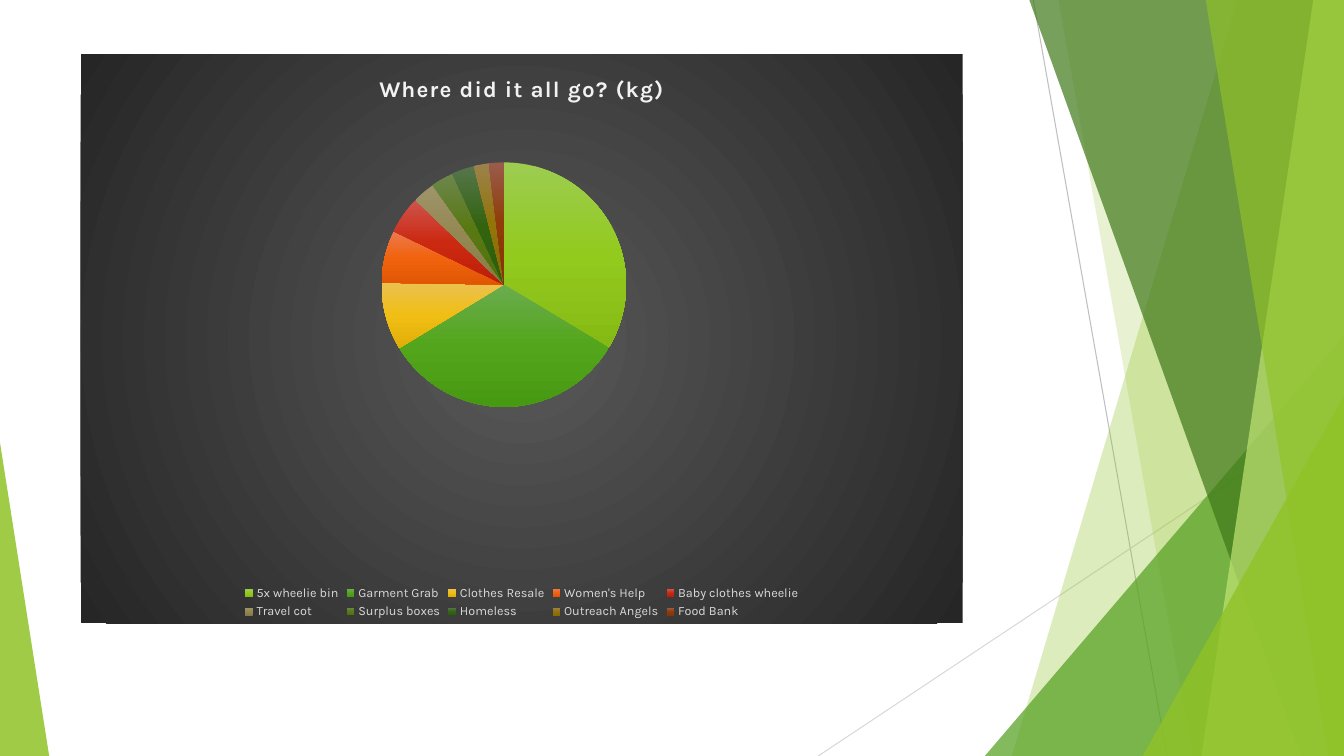
from dataclasses import dataclass

from lxml import etree
from pptx import Presentation
from pptx.chart.chart import Chart
from pptx.chart.data import CategoryChartData
from pptx.dml.color import RGBColor
from pptx.enum.chart import XL_CHART_TYPE, XL_LEGEND_POSITION
from pptx.enum.dml import MSO_THEME_COLOR
from pptx.enum.shapes import MSO_CONNECTOR, MSO_SHAPE
from pptx.oxml import parse_xml
from pptx.oxml.ns import nsdecls, qn
from pptx.shapes.autoshape import Shape
from pptx.slide import Slide
from pptx.util import Cm, Pt

PIE = XL_CHART_TYPE.PIE
LEGEND_BOTTOM = XL_LEGEND_POSITION.BOTTOM
STRAIGHT = MSO_CONNECTOR.STRAIGHT
TRIANGLE = MSO_SHAPE.ISOSCELES_TRIANGLE

FONT = "Karla"
WIDTH, HEIGHT = 33.87, 19.05
BAND_TOP = -0.03
LINEAR_DOWN = '<a:lin ang="5400000" scaled="0"/>'
FROM_CENTRE = '<a:path path="circle"><a:fillToRect l="50000" t="50000" r="50000" b="50000"/></a:path>'


@dataclass
class Line:
    start: tuple[float, float]
    end: tuple[float, float]
    color: str


@dataclass
class Band:
    """A shape with a slanted left edge that reaches the slide's right side."""
    top_x: float
    bottom_x: float
    color: str
    opacity: int


@dataclass
class Corner:
    """A right triangle standing on the slide's bottom edge."""
    left: float
    top: float
    width: float
    apex: float
    color: str
    opacity: int


@dataclass
class Slice:
    label: str
    value: int
    stops: tuple[str, str, str]


LINES = [
    Line((26.04, 0), (29.41, HEIGHT), "BFBFBF"),
    Line((WIDTH, 10.24), (20.62, HEIGHT), "D9D9D9"),
]
FACETS = [
    Band(31.19, 25.5, "90C226", 30),
    Band(26.67, 30.05, "90C226", 20),
    Corner(24.82, 8.46, 9.05, 1, "54A021", 72),
    Band(25.93, 32.79, "3F7819", 70),
    Band(33.1, 30.28, "C0E474", 70),
    Band(30.38, 33.48, "90C226", 65),
    Corner(28.8, 9.98, 5.07, 1, "90C226", 80),
    Corner(0, 11.15, 1.24, 0, "90C226", 85),
]
SLICES = [
    Slice("5x wheelie bin", 34, ("9DCC51", "93CA1E", "85BA14")),
    Slice("Garment Grab", 33, ("6BAC4F", "53A61B", "489912")),
    Slice("Clothes Resale", 9, ("EBC14F", "F0BE14", "E0AF07")),
    Slice("Women's Help", 7, ("EC794E", "F1630E", "E05603")),
    Slice("Baby clothes wheelie", 5, ("CE544D", "CC2911", "BD1E08")),
    Slice("Travel cot", 3, ("9E946B", "948852", "867A46")),
    Slice("Surplus boxes", 3, ("6D864D", "587912", "50700C")),
    Slice("Homeless", 3, ("57754C", "326410", "2B5C0B")),
    Slice("Outreach Angels", 2, ("9B824C", "937409", "886A03")),
    Slice("Food Bank", 2, ("995C4C", "913C08", "863402")),
]


def rgb(color: str) -> RGBColor:
    return RGBColor.from_string(color)


def gradient(stops: tuple[str, ...], direction: str) -> etree._Element:
    """Build a gradient fill with evenly spaced stops."""
    step = 100000 // (len(stops) - 1)
    marks = "".join(
        f'<a:gs pos="{index * step}"><a:srgbClr val="{color}"/></a:gs>'
        for index, color in enumerate(stops)
    )
    return parse_xml(
        f'<a:gradFill {nsdecls("a")} rotWithShape="1"><a:gsLst>{marks}</a:gsLst>{direction}</a:gradFill>'
    )


def draw_line(slide: Slide, line: Line) -> None:
    ends = [Cm(length) for length in (*line.start, *line.end)]
    connector = slide.shapes.add_connector(STRAIGHT, *ends)
    connector.line.color.rgb = rgb(line.color)
    connector.line.width = Pt(0.75)
    etree.SubElement(connector._element.spPr, qn("a:effectLst"))


def add_band(slide: Slide, band: Band) -> Shape:
    builder = slide.shapes.build_freeform(Cm(band.top_x), Cm(BAND_TOP))
    corners = [(WIDTH, BAND_TOP), (WIDTH, HEIGHT), (band.bottom_x, HEIGHT)]
    builder.add_line_segments([(Cm(x), Cm(y)) for x, y in corners], close=True)
    return builder.convert_to_shape()


def add_corner(slide: Slide, corner: Corner) -> Shape:
    shape = slide.shapes.add_shape(
        TRIANGLE, Cm(corner.left), Cm(corner.top), Cm(corner.width), Cm(HEIGHT - corner.top)
    )
    shape.adjustments[0] = corner.apex
    return shape


def draw_facet(slide: Slide, facet: Band | Corner) -> None:
    shape = add_band(slide, facet) if isinstance(facet, Band) else add_corner(slide, facet)
    shape.shadow.inherit = False
    shape.line.fill.background()
    shape.fill.solid()
    shape.fill.fore_color.rgb = rgb(facet.color)
    color = shape._element.spPr.find(qn("a:solidFill")).find(qn("a:srgbClr"))
    etree.SubElement(color, qn("a:alpha"), val=str(facet.opacity * 1000))


def add_title(chart: Chart, text: str) -> None:
    chart.has_title = True
    run = chart.chart_title.text_frame.paragraphs[0].add_run()
    run.text = text
    run.font.name = FONT
    run.font.size = Pt(16)
    run.font.bold = True
    run.font.color.rgb = rgb("F2F2F2")
    run._r.get_or_add_rPr().set("spc", "100")
    chart.chart_title.include_in_layout = False


def add_legend(chart: Chart) -> None:
    chart.has_legend = True
    chart.legend.position = LEGEND_BOTTOM
    chart.legend.include_in_layout = False
    chart.legend.font.name = FONT
    chart.legend.font.size = Pt(9)
    chart.legend.font.color.rgb = rgb("D9D9D9")


def place_plot(chart: Chart, x: float, y: float, w: float, h: float) -> None:
    """Fix the inner plot area, in fractions of the chart."""
    plot_area = chart.element.chart.plotArea
    for layout in plot_area.findall(qn("c:layout")):
        plot_area.remove(layout)
    sizes = "".join(
        f'<c:{name} val="{value}"/>' for name, value in zip("xywh", (x, y, w, h))
    )
    plot_area.insert(0, parse_xml(
        f'<c:layout {nsdecls("c")}><c:manualLayout><c:layoutTarget val="inner"/>'
        f'<c:xMode val="edge"/><c:yMode val="edge"/>{sizes}</c:manualLayout></c:layout>'
    ))


def draw_pie(slide: Slide) -> None:
    data = CategoryChartData()
    data.categories = [part.label for part in SLICES]
    data.add_series("Series 1", [part.value for part in SLICES])
    chart = slide.shapes.add_chart(PIE, Cm(2.03), Cm(1.37), Cm(22.23), Cm(14.33), data).chart
    chart.font.name = FONT
    chart.font.size = Pt(10)
    chart.font.color.theme_color = MSO_THEME_COLOR.TEXT_1
    add_title(chart, "Where did it all go? (kg)")
    add_legend(chart)
    place_plot(chart, 0.03, 0.19, 0.9, 0.43)

    background = parse_xml(f'<c:spPr {nsdecls("c", "a")}><a:ln><a:noFill/></a:ln></c:spPr>')
    background.insert(0, gradient(("595959", "262626"), FROM_CENTRE))
    chart.element.chart.addnext(background)

    chart.plots[0].vary_by_categories = True
    series = chart.plots[0].series[0]
    for index, part in enumerate(SLICES):
        series.points[index].format.line.fill.background()
        properties = series._element.findall(qn("c:dPt"))[index].find(qn("c:spPr"))
        properties.insert(0, gradient(part.stops, LINEAR_DOWN))


def main() -> None:
    presentation = Presentation()
    presentation.slide_width = Cm(WIDTH)
    presentation.slide_height = Cm(HEIGHT)
    slide = presentation.slides.add_slide(presentation.slide_layouts[6])
    for line in LINES:
        draw_line(slide, line)
    for facet in FACETS:
        draw_facet(slide, facet)
    draw_pie(slide)
    presentation.save("out.pptx")


if __name__ == "__main__":
    main()
